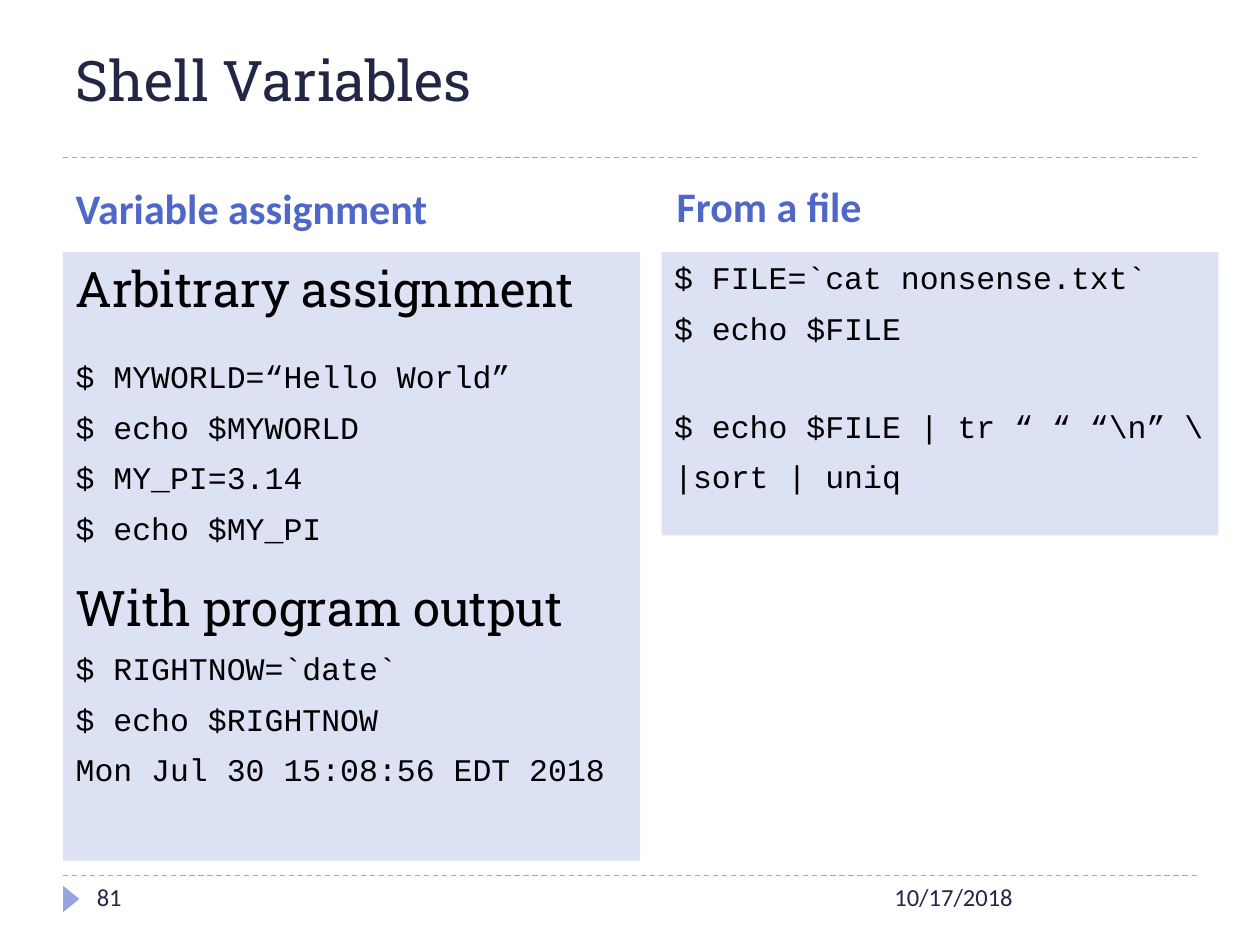
from lxml.etree import SubElement
from pptx import Presentation
from pptx.dml.color import RGBColor
from pptx.enum.dml import MSO_LINE
from pptx.enum.shapes import MSO_CONNECTOR, MSO_SHAPE
from pptx.enum.text import MSO_ANCHOR, MSO_AUTO_SIZE, PP_ALIGN
from pptx.oxml.ns import qn
from pptx.util import Inches, Pt

NAVY = RGBColor(0x21, 0x27, 0x45)
BLUE = RGBColor(0x4E, 0x67, 0xC8)
SOFT_BLUE = RGBColor(0x97, 0xA5, 0xDF)
PANEL = RGBColor(0xDC, 0xE1, 0xF4)
BLACK = RGBColor(0, 0, 0)
SERIF, SANS, MONO = "Roboto Slab", "Calibri", "Courier New"
GAP = 7.2

ASSIGNMENT = [
    ("Arbitrary assignment", SERIF, 28, 0),
    ("$ MYWORLD=“Hello World”", MONO, 18, 23),
    ("$ echo $MYWORLD", MONO, 18, GAP),
    ("$ MY_PI=3.14", MONO, 18, GAP),
    ("$ echo $MY_PI", MONO, 18, GAP),
    ("With program output", SERIF, 28, 18),
    ("$ RIGHTNOW=`date`", MONO, 18, GAP),
    ("$ echo $RIGHTNOW", MONO, 18, GAP),
    ("Mon Jul 30 15:08:56 EDT 2018", MONO, 18, GAP),
]
FROM_FILE = [
    ("$ FILE=`cat nonsense.txt`", MONO, 18, 0),
    ("$ echo $FILE", MONO, 18, GAP),
    ("$ echo $FILE | tr “ “ “\\n” \\", MONO, 18, 34.5),
    ("|sort | uniq", MONO, 18, GAP),
]


def place(sp, left, top, width, height):
    """Move and size a shape, in inches."""
    sp.left, sp.top = Inches(left), Inches(top)
    sp.width, sp.height = Inches(width), Inches(height)


def write(sp, lines, color, anchor=MSO_ANCHOR.TOP, bold=False):
    """Fill a shape with unbulleted (text, font, size, space before) lines."""
    tf = sp.text_frame
    tf.word_wrap = True
    tf.auto_size = MSO_AUTO_SIZE.NONE
    tf.vertical_anchor = anchor
    tf.text = "\n".join(line[0] for line in lines)
    for p, (_, name, size, before) in zip(tf.paragraphs, lines):
        pPr = p._p.get_or_add_pPr()
        pPr.set("marL", "0")
        pPr.set("indent", "0")
        SubElement(pPr, qn("a:buNone"))
        p.alignment = PP_ALIGN.LEFT
        p.space_before = Pt(before)
        for r in p.runs:
            r.font.name, r.font.size, r.font.bold = name, Pt(size), bold
            r.font.color.rgb = color


def add_rule(s, y):
    """Draw a dashed rule across the slide."""
    line = s.shapes.add_connector(
        MSO_CONNECTOR.STRAIGHT, Inches(0.5), Inches(y), Inches(9.5), Inches(y))
    line.line.color.rgb = SOFT_BLUE
    line.line.width = Pt(0.75)
    line.line.dash_style = MSO_LINE.DASH
    SubElement(line._element.spPr, qn("a:effectLst"))


def add_marker(s):
    """Draw the triangle beside the slide number."""
    sp = s.shapes.add_shape(MSO_SHAPE.ISOSCELES_TRIANGLE, Inches(0.46),
                            Inches(7.07), Inches(0.21), Inches(0.13))
    sp.rotation = 90
    sp.shadow.inherit = False
    sp.fill.solid()
    sp.fill.fore_color.rgb = SOFT_BLUE
    sp.line.fill.background()


def add_footer(s, text, left, width):
    """Add a footer text."""
    sp = s.shapes.add_textbox(Inches(left), Inches(6.95), Inches(width), Inches(0.4))
    write(sp, [(text, SANS, 14, 0)], NAVY)


def fill_heading(sp, text, *box):
    """Format a column heading."""
    place(sp, *box)
    write(sp, [(text, SANS, 24, 0)], BLUE, MSO_ANCHOR.BOTTOM, bold=True)


def fill_panel(sp, lines, *box):
    """Format a shaded panel of commands."""
    place(sp, *box)
    sp.fill.solid()
    sp.fill.fore_color.rgb = PANEL
    write(sp, lines, BLACK)


def main():
    """Build the slide."""
    prs = Presentation()
    prs.slide_width, prs.slide_height = Inches(10), Inches(7.5)
    s = prs.slides.add_slide(prs.slide_layouts[4])
    title, left_head, left_body, right_head, right_body = s.placeholders
    place(title, 0.5, 0.25, 8.92, 0.75)
    write(title, [("Shell Variables", SERIF, 32, 0)], NAVY, MSO_ANCHOR.MIDDLE)
    fill_heading(left_head, "Variable assignment", 0.5, 1.33, 4.42, 0.57)
    fill_heading(right_head, "From a file", 5.27, 1.31, 4.17, 0.57)
    fill_panel(left_body, ASSIGNMENT, 0.5, 2, 4.58, 4.83)
    fill_panel(right_body, FROM_FILE, 5.25, 2, 4.42, 2.25)
    for y in (1.25, 6.95):
        add_rule(s, y)
    add_marker(s)
    add_footer(s, "10/17/2018", 7, 2.5)
    add_footer(s, "81", 0.67, 2.17)
    prs.save("out.pptx")


if __name__ == "__main__":
    main()
